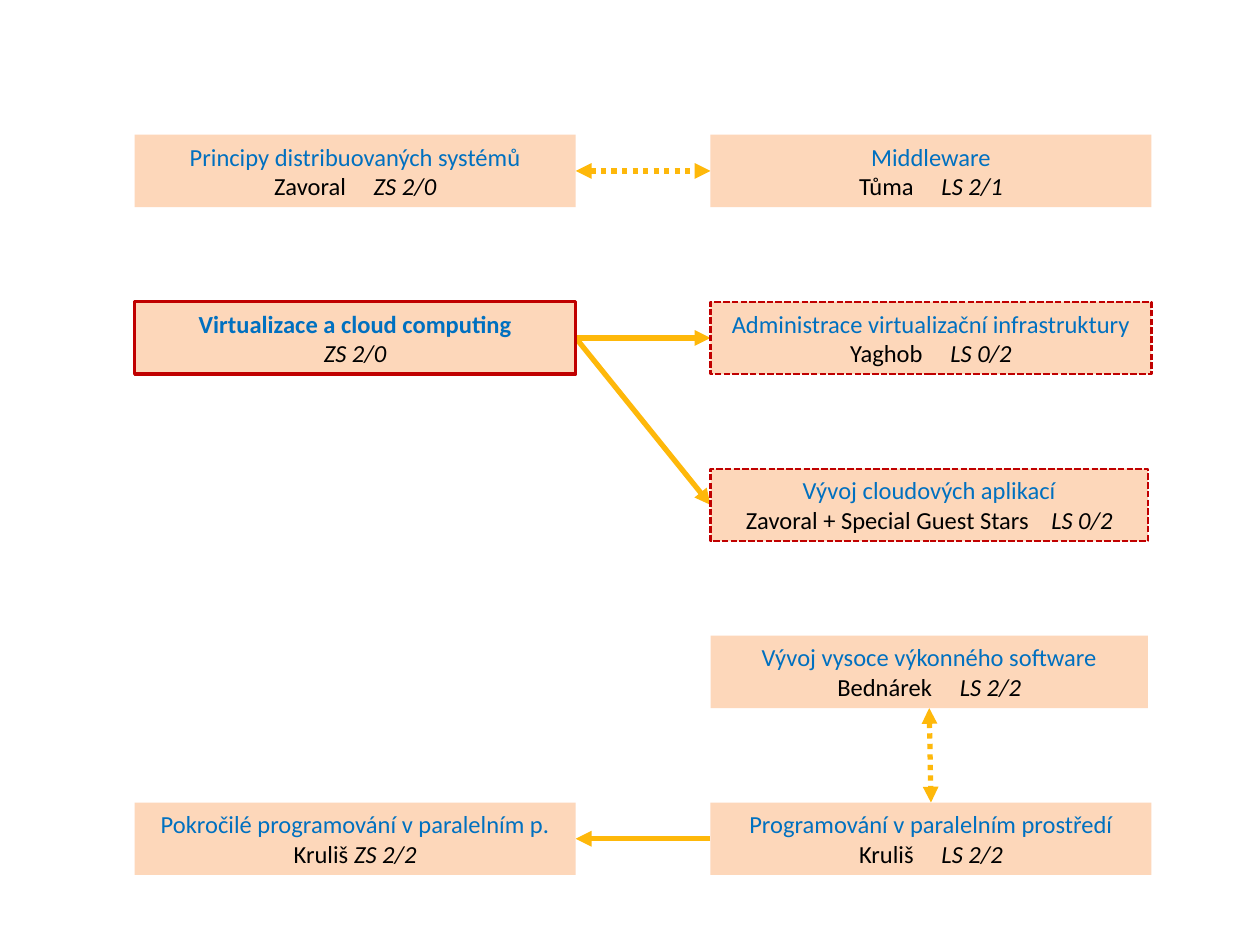
from dataclasses import dataclass

from lxml.etree import SubElement as Sub
from pptx import Presentation
from pptx.dml.color import RGBColor as Rgb
from pptx.enum.dml import MSO_LINE as Dash
from pptx.enum.shapes import MSO_CONNECTOR as Link, MSO_SHAPE as Form
from pptx.enum.text import MSO_ANCHOR as Anchor, PP_ALIGN as Align
from pptx.oxml.ns import qn
from pptx.util import Pt

COLORS = {"fill": "FDD7BA", "title": "0070C0", "text": "000000",
          "edge": "C00000", "arrow": "FEB80A"}
LEFT, RIGHT = 77, 406
TOP, PITCH = 77, 95.4
WIDE, SLIM, HIGH = 252, 250, 41.4
FONT, SIZE = "Calibri", 14
BELOW, WEST, EAST, ABOVE = 2, 1, 3, 0


@dataclass
class Course:
    key: str
    left: float
    row: int
    title: str
    name: str
    term: str
    gap: float = 12.65  # extra space between name and term
    width: float = WIDE
    edge: float = 0
    dash: bool = False
    bold: bool = False


@dataclass
class Arrow:
    start: str
    out: int
    end: str
    into: int
    both: bool = False  # dotted, with two heads


COURSES = [
    Course("dist", LEFT, 0, "Principy distribuovaných systémů", "Zavoral", "ZS 2/0"),
    Course("middle", RIGHT, 0, "Middleware", "Tůma", "LS 2/1"),
    Course("cloud", LEFT, 1, "Virtualizace a cloud computing", "", "ZS 2/0",
           edge=2, bold=True),
    Course("admin", RIGHT, 1, "Administrace virtualizační infrastruktury", "Yaghob",
           "LS 0/2", edge=1.25, dash=True),
    Course("apps", RIGHT, 2, "Vývoj cloudových aplikací",
           "Zavoral + Special Guest Stars", "LS 0/2", gap=9.5, width=SLIM,
           edge=1.25, dash=True),
    Course("power", RIGHT, 3, "Vývoj vysoce výkonného software", "Bednárek",
           "LS 2/2", width=SLIM),
    Course("expert", LEFT, 4, "Pokročilé programování v paralelním p.", "Kruliš",
           "ZS 2/2", gap=0),
    Course("basic", RIGHT, 4, "Programování v paralelním prostředí", "Kruliš", "LS 2/2"),
]

ARROWS = [
    Arrow("dist", EAST, "middle", WEST, both=True),
    Arrow("cloud", EAST, "admin", WEST),
    Arrow("cloud", EAST, "apps", WEST),
    Arrow("power", BELOW, "basic", ABOVE, both=True),
    Arrow("basic", WEST, "expert", EAST),
]


def color(name: str) -> Rgb:
    return Rgb.from_string(COLORS[name])


def add_run(para, text: str, tint: str = "text", bold: bool = False,
            slant: bool = False, space: float = 0) -> None:
    run = para.add_run()
    run.text = text
    font = run.font
    font.name, font.size = FONT, Pt(SIZE)
    font.bold, font.italic = bold, slant
    font.color.rgb = color(tint)
    if space:
        run._r.get_or_add_rPr().set("spc", str(round(space * 100)))


def add_box(slide, item: Course):
    box = slide.shapes.add_shape(Form.RECTANGLE, Pt(item.left),
                                 Pt(TOP + item.row * PITCH), Pt(item.width), Pt(HIGH))
    box.shadow.inherit = False
    box.fill.solid()
    box.fill.fore_color.rgb = color("fill")
    if item.edge:
        box.line.color.rgb = color("edge")
        box.line.width = Pt(item.edge)
        if item.dash:
            box.line.dash_style = Dash.SQUARE_DOT
    else:
        box.line.fill.background()

    # Title above, teacher and term below
    frame = box.text_frame
    frame.word_wrap = True
    frame.vertical_anchor = Anchor.MIDDLE
    head, foot = frame.paragraphs[0], frame.add_paragraph()
    head.alignment = foot.alignment = Align.CENTER
    add_run(head, item.title, "title", bold=item.bold)
    if item.name:
        add_run(foot, item.name)
        add_run(foot, " ", space=item.gap)
    add_run(foot, item.term, slant=True)
    return box


def add_arrow(slide, item: Arrow, boxes: dict) -> None:
    link = slide.shapes.add_connector(Link.STRAIGHT, 0, 0, 0, 0)
    link.begin_connect(boxes[item.start], item.out)
    link.end_connect(boxes[item.end], item.into)
    link.line.color.rgb = color("arrow")
    link.line.width = Pt(3)
    if item.both:
        link.line.dash_style = Dash.ROUND_DOT
    line = link.line._get_or_add_ln()
    for tag in ("a:headEnd", "a:tailEnd") if item.both else ("a:tailEnd",):
        Sub(line, qn(tag), type="triangle")
    Sub(link._element.spPr, qn("a:effectLst"))
    # Keep arrows behind the boxes
    slide.shapes._spTree.insert(2, link._element)


def main() -> None:
    deck = Presentation()
    deck.slide_width, deck.slide_height = Pt(720), Pt(540)
    slide = deck.slides.add_slide(deck.slide_layouts[6])
    boxes = {item.key: add_box(slide, item) for item in COURSES}
    for item in ARROWS:
        add_arrow(slide, item, boxes)
    deck.save("out.pptx")


if __name__ == "__main__":
    main()
